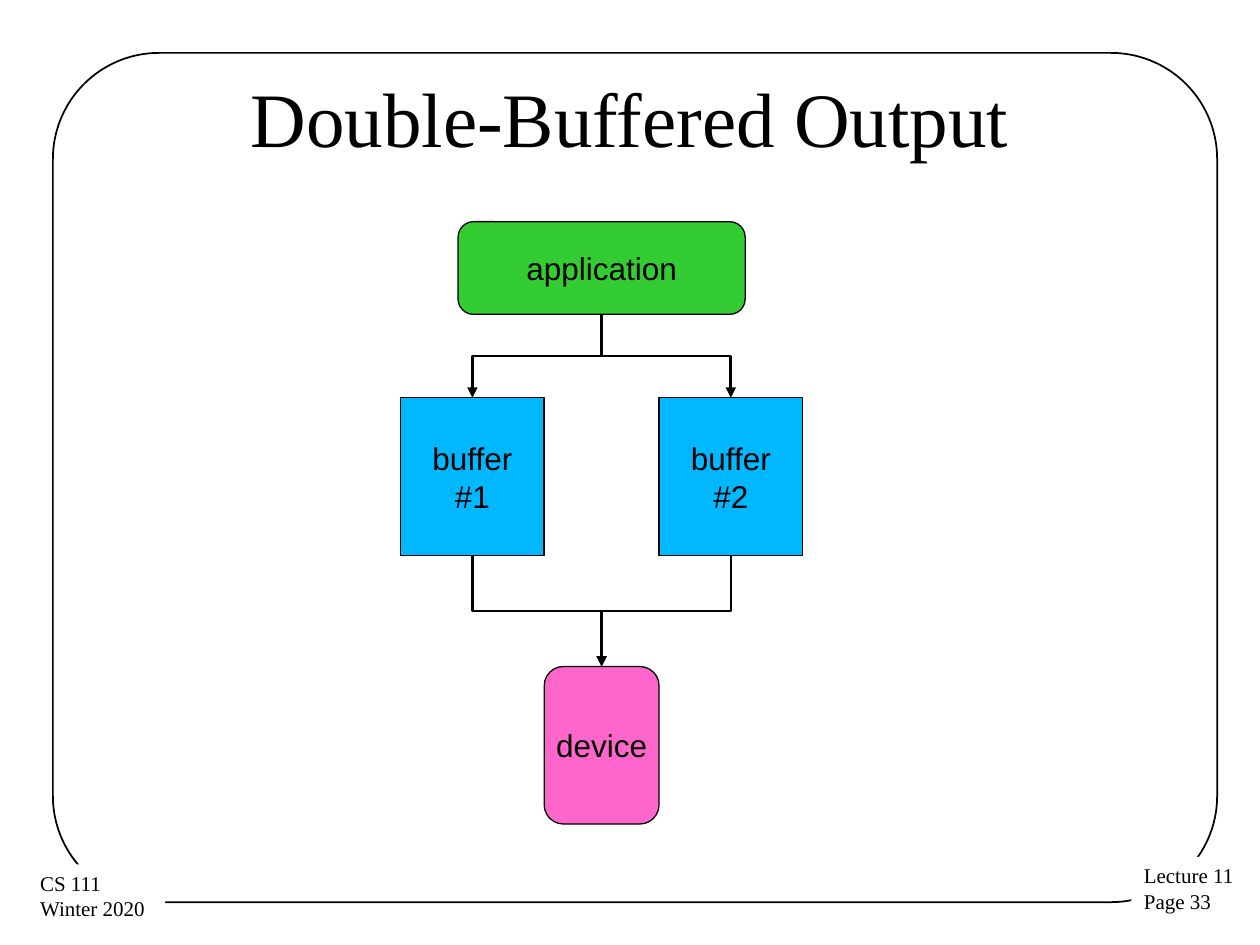
from pptx import Presentation
from pptx.dml.color import RGBColor as Rgb
from pptx.enum.shapes import MSO_CONNECTOR as Link, MSO_SHAPE as Shape
from pptx.enum.text import MSO_ANCHOR as Anchor, PP_ALIGN as Align
from pptx.oxml import parse_xml
from pptx.oxml.ns import nsdecls, qn
from pptx.util import Inches, Pt

HUES = {"ink": "000000", "paper": "FFFFFF", "app": "33CC33",
        "buffer": "00B8FF", "device": "FF66CC"}
SERIF, SANS = "Times New Roman", "Arial"
COLS, ROWS = 14, 65


def hue(name):
    return Rgb.from_string(HUES[name])


def write(shape, text, size, font, align, anchor, pad, wrap=False):
    frame = shape.text_frame
    frame.text = text
    frame.word_wrap = wrap
    frame.vertical_anchor = anchor
    frame.margin_left = frame.margin_right = Inches(pad)
    frame.margin_top = frame.margin_bottom = Inches(pad / 2)
    for para in frame.paragraphs:
        para.alignment = align
        for run in para.runs:
            run.font.size = Pt(size)
            run.font.name = font
            run.font.color.rgb = hue("ink")


def draw(slide, kind, box, fill=None, line=None, round_by=None):
    shape = slide.shapes.add_shape(kind, *map(Inches, box))
    shape.shadow.inherit = False
    if fill:
        shape.fill.solid()
        shape.fill.fore_color.rgb = hue(fill)
    else:
        shape.fill.background()
    if line:
        shape.line.color.rgb = hue("ink")
        shape.line.width = Pt(line)
    else:
        shape.line.fill.background()
    if round_by:
        shape.adjustments[0] = round_by
    return shape


def add_frame(slide, box):
    draw(slide, Shape.ROUNDED_RECTANGLE, box, line=1, round_by=0.125)


def add_note(slide, box, text):
    note = draw(slide, Shape.RECTANGLE, box, "paper")
    write(note, text, 12, SERIF, Align.LEFT, Anchor.TOP, 0.1)


def add_title(slide, box, text):
    title = slide.shapes.add_textbox(*map(Inches, box))
    write(title, text, 44, SERIF, Align.CENTER, Anchor.MIDDLE, 0.1, True)


def join(slide, src, dest):
    link = slide.shapes.add_connector(Link.ELBOW, 0, 0, 0, 0)
    link.begin_connect(src, 2)
    link.end_connect(dest, 0)
    start, stop = src.left + src.width // 2, dest.left + dest.width // 2
    top = src.top + src.height
    drop, span = dest.top - top, abs(stop - start)
    link.left = (start + stop - drop) // 2
    link.top = top + (drop - span) // 2
    link.width, link.height = drop, span
    right = stop > start
    props = link._element.spPr
    form = props.find(qn("a:xfrm"))
    form.set("rot", str((270 if right else 90) * 60000))
    form.set("flipH", str(int(right)))
    form.set("flipV", "0")
    link.line.color.rgb = hue("ink")
    link.line.width = Pt(1.5)
    props.find(qn("a:ln")).append(
        parse_xml(f'<a:tailEnd {nsdecls("a")} type="triangle"/>'))
    props.append(parse_xml(f'<a:effectLst {nsdecls("a")}/>'))


def add_flow(slide, box):
    left, top, width, height = box
    col, row = width / COLS, height / ROWS

    def node(text, fill, x, y, w, h, kind=Shape.ROUNDED_RECTANGLE):
        area = left + x * col, top + y * row, w * col, h * row
        bend = None if kind == Shape.RECTANGLE else 0.167
        shape = draw(slide, kind, area, fill, 0.75, bend)
        write(shape, text, 18, SANS, Align.CENTER, Anchor.MIDDLE, 0.09)
        return shape

    stores = [node(f"buffer\n#{i + 1}", "buffer", 9 * i, 19, 5, 17,
                   Shape.RECTANGLE) for i in range(2)]
    app = node("application", "app", 2, 0, 10, 10)
    device = node("device", "device", 5, 48, 4, 17)
    for store in stores:
        join(slide, app, store)
    for store in stores:
        join(slide, store, device)


def main():
    deck = Presentation()
    deck.slide_width, deck.slide_height = Inches(10), Inches(7.5)
    slide = deck.slides.add_slide(deck.slide_layouts[6])
    add_frame(slide, (0.42, 0.42, 9.24, 6.74))
    add_note(slide, (8.98, 6.8, 0.92, 0.51), "Lecture 11\nPage 33")
    add_note(slide, (0.22, 6.86, 1.09, 0.51), "CS 111\nWinter 2020")
    add_title(slide, (0.5, 0.3, 9, 1.25), "Double-Buffered Output")
    add_flow(slide, (3.18, 1.76, 3.19, 4.78))
    deck.save("out.pptx")


if __name__ == "__main__":
    main()
